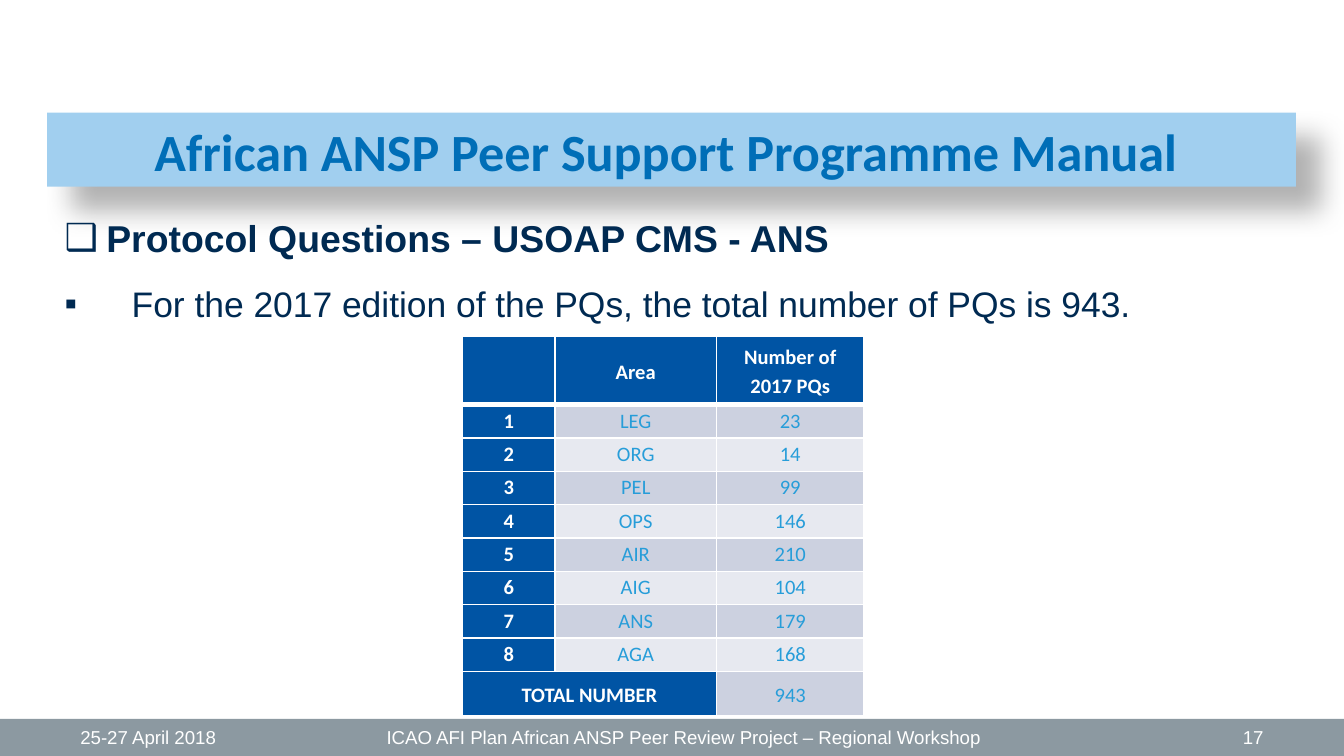
from lxml import etree
from pptx import Presentation
from pptx import util as u
from pptx.dml.color import RGBColor
from pptx.enum import shapes, text
from pptx.oxml import parse_xml
from pptx.oxml.ns import nsdecls, qn

COLORS = {
    "white": "FFFFFF",
    "footer": "8C99A1",
    "banner": "A1CFEF",
    "title": "006EB7",
    "navy": "002A52",
    "header": "0054A4",
    "value": "279DD9",
    "odd": "CCD1E0",
    "even": "E7E9F0",
}
Cm, Pt = u.Cm, u.Pt


def add_run(paragraph, words, font, size, color, bold=False):
    run = paragraph.add_run()
    run.text = words
    run.font.name = font
    run.font.size = Pt(size)
    run.font.bold = bold
    run.font.color.rgb = RGBColor.from_string(COLORS[color])


def fill_cell(cell, color, top=1, bottom=1):
    cell.fill.solid()
    cell.fill.fore_color.rgb = RGBColor.from_string(COLORS[color])
    cell.margin_left = cell.margin_right = Cm(0.18)
    cell.margin_top = cell.margin_bottom = 0
    borders = {"lnL": 1, "lnR": 1, "lnT": top, "lnB": bottom}
    for index, (side, width) in enumerate(borders.items()):
        cell._tc.get_or_add_tcPr().insert(index, parse_xml(
            f'<a:{side} {nsdecls("a")} w="{Pt(width)}"><a:solidFill>'
            f'<a:srgbClr val="{COLORS["white"]}"/></a:solidFill></a:{side}>'))


presentation = Presentation()
presentation.slide_width, presentation.slide_height = Cm(25.4), Cm(14.29)
slide = presentation.slides.add_slide(presentation.slide_layouts[5])

# Footer bar with date, event and slide number
bar = slide.shapes.add_shape(
    shapes.MSO_SHAPE.RECTANGLE, 0, Cm(13.59), Cm(25.4), Cm(0.7))
bar.shadow.inherit = False
bar.fill.solid()
bar.fill.fore_color.rgb = RGBColor.from_string(COLORS["footer"])
bar.line.fill.background()

footers = [
    (1.27, 5.92, text.PP_ALIGN.LEFT, "25-27 April 2018"),
    (7.01, 11.81, text.PP_ALIGN.CENTER,
     "ICAO AFI Plan African ANSP Peer Review Project – Regional Workshop"),
    (18.21, 5.92, text.PP_ALIGN.RIGHT, "17"),
]
for left, width, alignment, words in footers:
    footer = slide.shapes.add_textbox(Cm(left), Cm(13.59), Cm(width), Cm(0.7))
    footer.text_frame.word_wrap = True
    footer.text_frame.vertical_anchor = text.MSO_ANCHOR.MIDDLE
    paragraph = footer.text_frame.paragraphs[0]
    paragraph.alignment = alignment
    add_run(paragraph, words, "Arial", 10, "white")

# Title banner with a soft shadow
title = slide.shapes.title
title.left, title.top, title.width, title.height = (
    Cm(0.89), Cm(2.13), Cm(23.6), Cm(1.4))
title.fill.solid()
title.fill.fore_color.rgb = RGBColor.from_string(COLORS["banner"])
title.line.fill.background()
title._element.spPr.append(parse_xml(
    f'<a:effectLst {nsdecls("a")}><a:outerShdw blurRad="{Pt(15)}" '
    f'dist="{Pt(18)}" dir="2700000" algn="tl" rotWithShape="0">'
    '<a:srgbClr val="000000"><a:alpha val="30000"/></a:srgbClr>'
    '</a:outerShdw></a:effectLst>'))
title.text_frame.auto_size = text.MSO_AUTO_SIZE.NONE
title.text_frame.vertical_anchor = text.MSO_ANCHOR.TOP
paragraph = title.text_frame.paragraphs[0]
paragraph.alignment = text.PP_ALIGN.CENTER
add_run(paragraph, "African ANSP Peer Support Programme Manual ",
        "Calibri", 28, "title", True)

# Bulleted statements
body = slide.shapes.add_textbox(Cm(0.97), Cm(3.94), Cm(23.14), Cm(9.6))
body.text_frame.word_wrap = True
statements = [
    ("❑", 0.79, 0, 20, True, "Protocol Questions – USOAP CMS - ANS"),
    ("▪", 1.27, 6, 19, False,
     "For the 2017 edition of the PQs, the total number of PQs is 943."),
]
for index, (bullet, indent, before, size, bold, words) in enumerate(statements):
    frame = body.text_frame
    paragraph = frame.add_paragraph() if index else frame.paragraphs[0]
    properties = paragraph._p.get_or_add_pPr()
    properties.set("marL", str(Cm(indent)))
    properties.set("indent", str(-Cm(indent)))
    etree.SubElement(properties, qn("a:buFont"), typeface="Arial")
    etree.SubElement(properties, qn("a:buChar"), char=bullet)
    paragraph.space_before = Pt(before)
    paragraph.space_after = Pt(6)
    add_run(paragraph, words, "Arial", size, "navy", bold)

# Table of protocol questions by area
areas = [("LEG", 23), ("ORG", 14), ("PEL", 99), ("OPS", 146),
         ("AIR", 210), ("AIG", 104), ("ANS", 179), ("AGA", 168)]
rows = [("", "Area", "Number of 2017 PQs")]
rows += [(number, *area) for number, area in enumerate(areas, 1)]
rows += [("TOTAL NUMBER", "", sum(count for _, count in areas))]
last = len(rows) - 1
widths = [1.75, 3.05, 2.79]
heights = [1.3] + [0.63] * len(areas) + [0.84]

table = slide.shapes.add_table(
    len(rows), len(widths), Cm(8.74), Cm(6.35),
    Cm(sum(widths)), Cm(sum(heights))).table
for column, width in zip(table.columns, widths):
    column.width = Cm(width)
for row, height in zip(table.rows, heights):
    row.height = Cm(height)
table.cell(last, 0).merge(table.cell(last, 1))

for row_index, row in enumerate(rows):
    band = "odd" if row_index % 2 else "even"
    for column_index, value in enumerate(row):
        cell = table.cell(row_index, column_index)
        heading = row_index == 0 or column_index == 0
        fill_cell(cell, "header" if heading else band,
                  top=3 if row_index == 1 else 1,
                  bottom=3 if row_index == 0 else 1)
        if row_index in (0, last):
            cell.vertical_anchor = text.MSO_ANCHOR.MIDDLE
        if value != "":
            paragraph = cell.text_frame.paragraphs[0]
            paragraph.alignment = text.PP_ALIGN.CENTER
            paragraph.line_spacing = 1.15
            add_run(paragraph, str(value), "Calibri", 11,
                    "white" if heading else "value", heading)

presentation.save("out.pptx")
